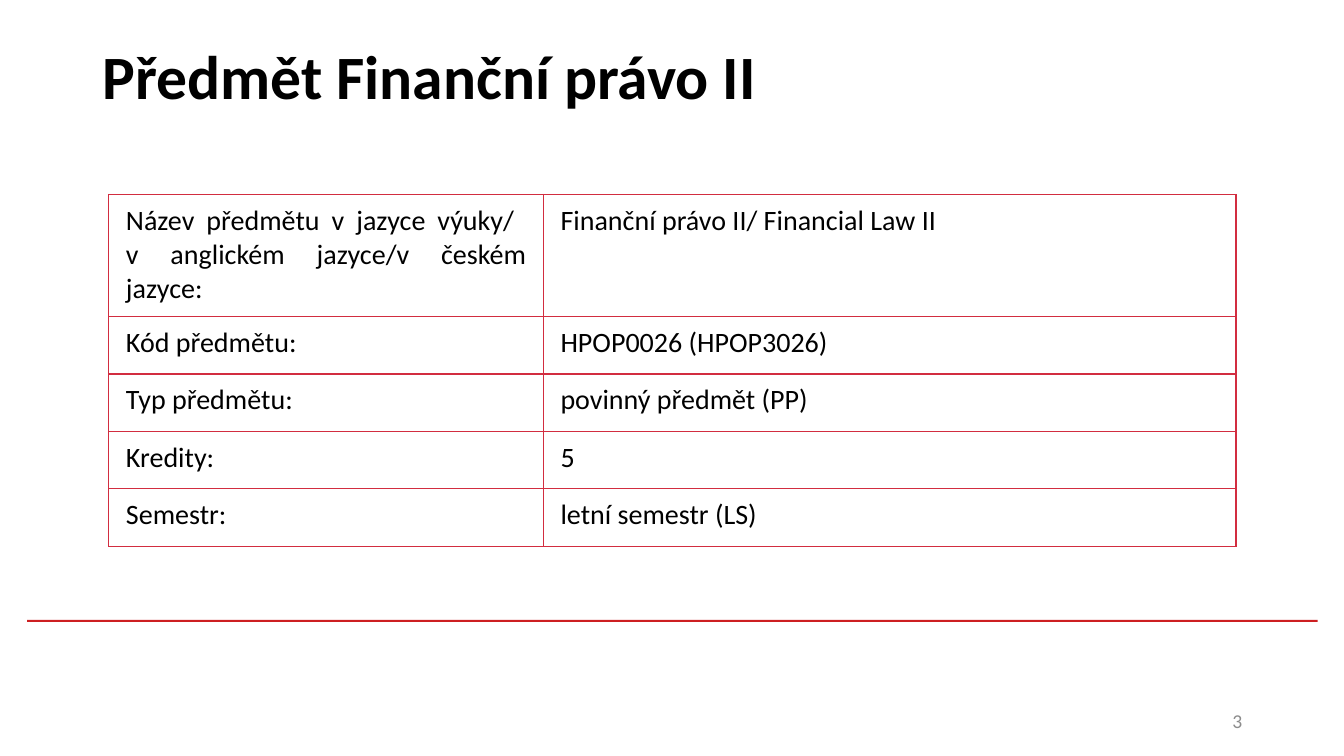
from lxml import etree
from pptx import Presentation
from pptx.dml.color import RGBColor
from pptx.enum import shapes, text
from pptx.oxml import ns
from pptx.util import Inches, Pt

RED = "D22D40"
ROWS = [
    ("Název předmětu v jazyce výuky/ \nv anglickém jazyce/v českém jazyce:",
     "Finanční právo II/ Financial Law II"),
    ("Kód předmětu:", "HPOP0026 (HPOP3026)"),
    ("Typ předmětu:", "povinný předmět (PP)"),
    ("Kredity:", "5"),
    ("Semestr:", "letní semestr (LS)"),
]


def color(code):
    return RGBColor.from_string(code)


def write(frame, words, size, tone, align, bold=False):
    """Fill the first paragraph of a frame and style it."""
    frame.word_wrap = True
    para = frame.paragraphs[0]
    para.text = words
    para.alignment = align
    font = para.font
    font.name, font.size, font.bold = "Calibri", Pt(size), bold
    font.color.rgb = color(tone)


deck = Presentation()
deck.slide_width, deck.slide_height = Inches(13.33), Inches(7.5)
slide = deck.slides.add_slide(deck.slide_layouts[6])

# Red rule
rule = slide.shapes.add_shape(shapes.MSO_SHAPE.RECTANGLE, Inches(0.27),
                              Inches(6.15), Inches(12.8), Inches(0.02))
rule.shadow.inherit = False
rule.fill.solid()
rule.fill.fore_color.rgb = color("CD1F21")
rule.line.fill.background()

# Title and page number
align = text.PP_ALIGN
for words, spot, size, tone, side, bold in [
    ("Předmět Finanční právo II", (0.92, 0.02, 11.5, 1.45), 44, "000000", align.LEFT, True),
    ("3", (9.42, 6.95, 3, 0.4), 14, "8C8C8C", align.RIGHT, False),
]:
    box = slide.shapes.add_textbox(*map(Inches, spot))
    box.text_frame.vertical_anchor = text.MSO_ANCHOR.MIDDLE
    write(box.text_frame, words, size, tone, side, bold)

# Course table
table = slide.shapes.add_table(len(ROWS), 2, Inches(1.08), Inches(1.93),
                               Inches(11.18), Inches(3.49)).table
table.first_row = table.horz_banding = False
for col, width in zip(table.columns, (4.31, 6.87)):
    col.width = Inches(width)
for i, pair in enumerate(ROWS):
    table.rows[i].height = Inches(0.57 if i else 1.21)
    for j, words in enumerate(pair):
        cell = table.cell(i, j)
        cell.margin_left = cell.margin_right = Inches(0.17)
        cell.margin_top = cell.margin_bottom = Inches(0.09)
        write(cell.text_frame, words, 20, "000000", align.JUSTIFY)
        props = cell._tc.get_or_add_tcPr()
        for edge in ("lnL", "lnR", "lnT", "lnB"):
            line = etree.SubElement(props, ns.qn("a:" + edge), w=str(Pt(1)))
            fill = etree.SubElement(line, ns.qn("a:solidFill"))
            etree.SubElement(fill, ns.qn("a:srgbClr"), val=RED)
        cell.fill.background()

deck.save("out.pptx")
